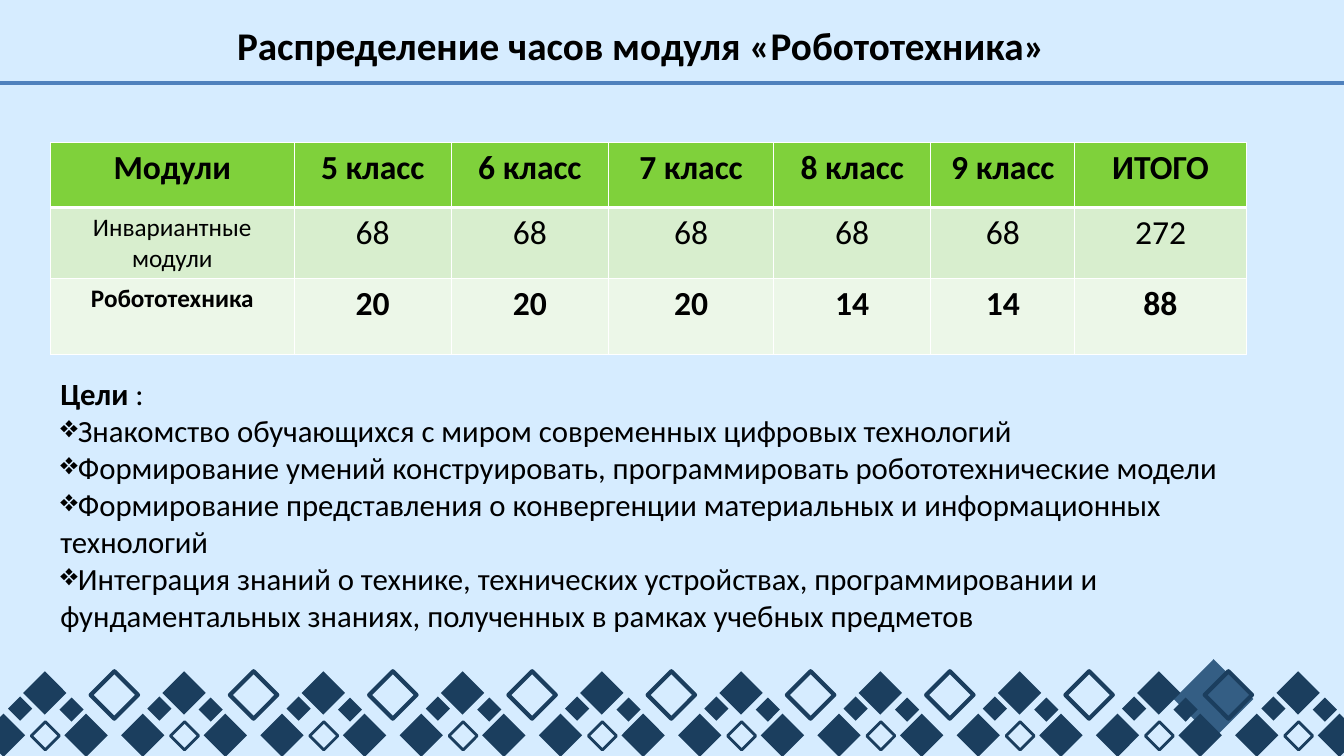
from dataclasses import dataclass

from lxml import etree
from pptx import Presentation
from pptx.dml.color import RGBColor
from pptx.enum.shapes import MSO_CONNECTOR, MSO_SHAPE
from pptx.enum.text import MSO_AUTO_SIZE, PP_ALIGN
from pptx.oxml.ns import qn
from pptx.util import Inches, Pt

DIAMOND = MSO_SHAPE.DIAMOND
STRAIGHT = MSO_CONNECTOR.STRAIGHT
CENTER = PP_ALIGN.CENTER
LEFT = PP_ALIGN.LEFT
GROW = MSO_AUTO_SIZE.SHAPE_TO_FIT_TEXT


@dataclass(frozen=True)
class Theme:
    font: str = "Calibri"
    back: str = "D6ECFF"
    ink: str = "000000"
    navy: str = "1B3E5E"
    steel: str = "345E84"
    rule: str = "4F81BD"
    edge: str = "FFFFFF"
    rows: tuple = ("7FD13B", "D8EECE", "ECF7E8")
    title: int = 28
    cell: int = 24
    body: int = 22
    label: int = 18


class Deck:
    def __init__(self, theme):
        self.theme = theme
        self.prs = Presentation()
        self.prs.slide_width = Inches(13.34)
        self.prs.slide_height = Inches(7.5)
        self.slide = self.prs.slides.add_slide(self.prs.slide_layouts[6])
        self.shapes = self.slide.shapes
        self.paint(self.slide.background.fill, theme.back)

    def paint(self, fill, color):
        fill.solid()
        fill.fore_color.rgb = RGBColor.from_string(color)

    def style(self, para, size, bold=None, align=LEFT):
        para.alignment = align
        font = para.font
        font.name, font.size, font.bold = self.theme.font, Pt(size), bold
        font.color.rgb = RGBColor.from_string(self.theme.ink)

    def diamond(self, x, y, side, color, width=0):
        """Solid diamond, or an outline when a line width is given."""
        shape = self.shapes.add_shape(
            DIAMOND, Inches(x), Inches(y), Inches(side), Inches(side))
        shape.shadow.inherit = False
        if width:
            shape.fill.background()
            self.paint(shape.line.fill, color)
            shape.line.width = Pt(width)
        else:
            self.paint(shape.fill, color)
            shape.line.fill.background()

    def line(self, x1, y1, x2, y2, color, width):
        line = self.shapes.add_connector(
            STRAIGHT, Inches(x1), Inches(y1), Inches(x2), Inches(y2))
        self.paint(line.line.fill, color)
        line.line.width = Pt(width)
        etree.SubElement(line._element.spPr, qn("a:effectLst"))

    def text(self, x, y, w, h):
        box = self.shapes.add_textbox(Inches(x), Inches(y), Inches(w), Inches(h))
        frame = box.text_frame
        frame.word_wrap = True
        frame.auto_size = GROW
        return frame

    def bullet(self, para, mark):
        props = para._p.get_or_add_pPr()
        props.set("marL", "0")
        props.set("indent", "0")
        etree.SubElement(props, qn("a:buChar"), char=mark)

    def border(self, cell, side, width):
        props = cell._tc.get_or_add_tcPr()
        line = etree.SubElement(props, qn("a:ln" + side), w=str(Pt(width)))
        fill = etree.SubElement(line, qn("a:solidFill"))
        etree.SubElement(fill, qn("a:srgbClr"), val=self.theme.edge)

    def table(self, x, y, widths, heights, data):
        theme = self.theme
        table = self.shapes.add_table(
            len(heights), len(widths), Inches(x), Inches(y),
            Inches(sum(widths)), Inches(sum(heights))).table
        table.horz_banding = False
        for col, width in zip(table.columns, widths):
            col.width = Inches(width)
        for r, (row, height) in enumerate(zip(table.rows, heights)):
            row.height = Inches(height)
            for c, cell in enumerate(row.cells):
                cell.text = data[r][c]
                size = theme.label if r and c == 0 else theme.cell
                self.style(cell.text_frame.paragraphs[0], size, r != 1, CENTER)
                for side in "LRTB":
                    thick = (r, side) in ((0, "B"), (1, "T"))
                    self.border(cell, side, 3 if thick else 1)
                self.paint(cell.fill, theme.rows[r])


def main():
    theme = Theme()
    deck = Deck(theme)

    # Diamond frieze along the bottom
    deck.diamond(11.65, 6.54, 0.79, theme.steel)
    step = 12.44 / 9
    motif = [(0, 7.08, 0.43, 0), (0.49, 7.16, 0.28, 2), (0.41, 6.66, 0.43, 0),
             (0.82, 7.08, 0.43, 0), (0.26, 6.91, 0.24, 0), (0.77, 6.92, 0.24, 0)]
    for i in range(10):
        for dx, y, side, width in motif:
            deck.diamond(-0.18 + i * step + dx, y, side, theme.navy, width)
    for i in range(9):
        deck.diamond(0.9 + i * step, 6.66, 0.47, theme.navy, 3)

    # Title and rule
    deck.line(0, 0.82, 13.34, 0.82, theme.rule, 3)
    title = deck.text(0.42, 0.16, 11.88, 0.57).paragraphs[0]
    title.text = "Распределение часов модуля «Робототехника»"
    deck.style(title, theme.title, True, CENTER)

    # Hours by class
    deck.table(0.5, 1.41, [2.42, 1.56, 1.56, 1.64, 1.56, 1.43, 1.7],
               [0.65, 0.65, 0.76], [
        ["Модули", *(f"{n} класс" for n in range(5, 10)), "ИТОГО"],
        ["Инвариантные модули", *["68"] * 5, "272"],
        ["Робототехника", "20", "20", "20", "14", "14", "88"],
    ])

    # Goals
    frame = deck.text(0.5, 3.67, 11.8, 3.06)
    head = frame.paragraphs[0]
    deck.style(head, theme.body)
    for words, bold in (("Цели", True), (" :", False)):
        run = head.add_run()
        run.text, run.font.bold = words, bold
    goals = [
        "Знакомство обучающихся с миром современных цифровых технологий",
        "Формирование умений конструировать, программировать "
        "робототехнические модели",
        "Формирование представления о конвергенции материальных и "
        "информационных технологий",
        "Интеграция знаний о технике, технических устройствах, "
        "программировании и фундаментальных знаниях, полученных в рамках "
        "учебных предметов",
    ]
    for goal in goals:
        para = frame.add_paragraph()
        para.text = goal
        deck.bullet(para, "❖")
        deck.style(para, theme.body, False)

    deck.prs.save("out.pptx")


if __name__ == "__main__":
    main()
